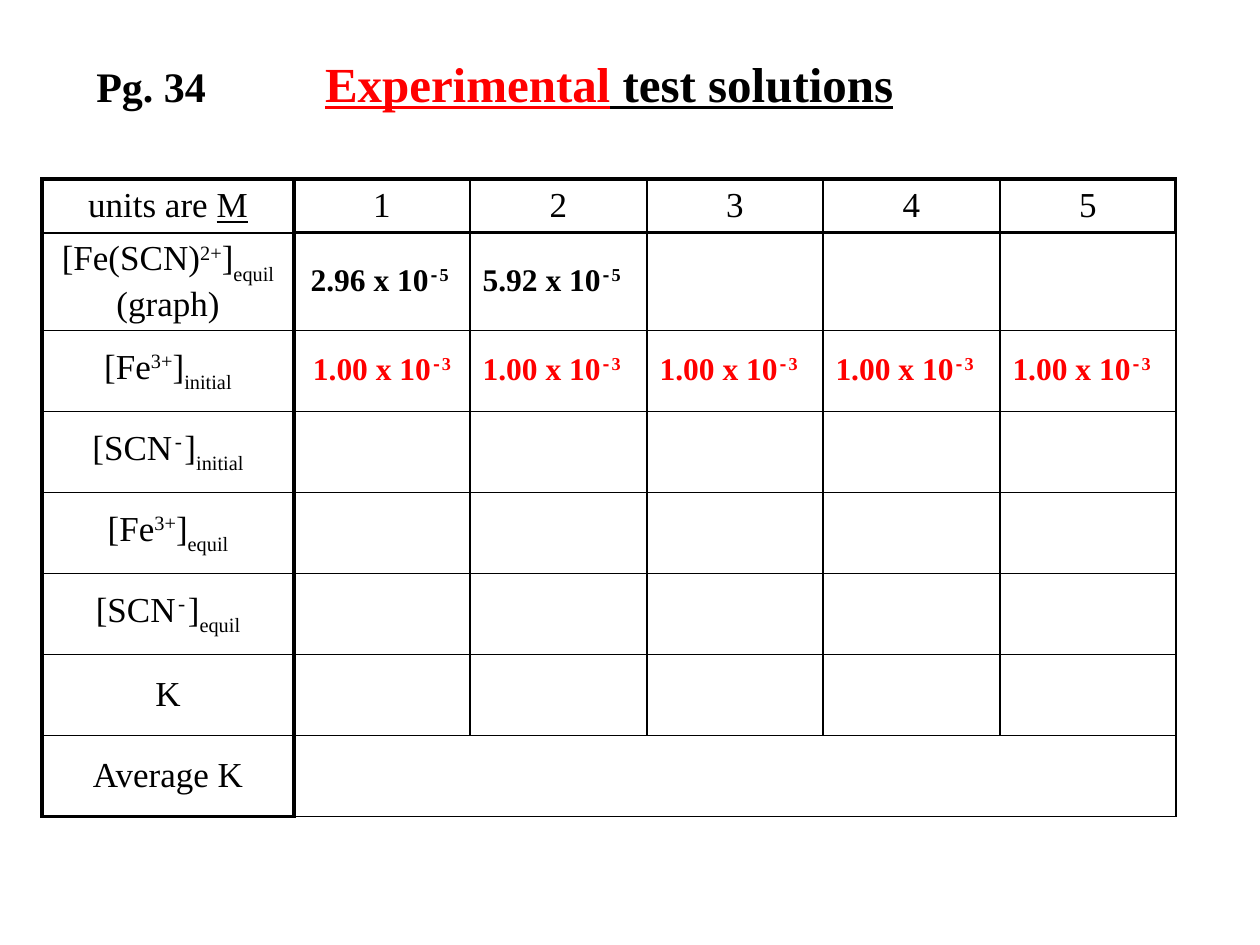
from lxml import etree
from pptx import Presentation, util as u
from pptx.dml.color import RGBColor
from pptx.enum import text as t
from pptx.oxml import ns

COLORS = {"ink": "000000", "red": "FF0000"}
SERIF, MONO = "Times New Roman", "Courier New"
SCALE = 914400 / 126

# Pieces are split by "|"; a leading ^ raises, _ lowers and * underlines a piece.
ROWS = [
    ["units are |*M", "1", "2", "3", "4", "5"],
    ["[Fe(SCN)|^2+|]|_equil| (graph)", "2.96 x 10|^-|^5 ", "5.92 x 10|^-|^5"],
    ["[Fe|^3+|]|_initial"] + ["1.00 x 10|^-|^3"] * 5,
    ["[SCN|^-|]|_initial"],
    ["[Fe|^3+|]|_equil"],
    ["[SCN|^-|]|_equil"],
    ["K"],
    ["Average K"],
]
WIDTHS = [252, 176, 177, 176, 177, 176]
HEIGHTS = [54, 97] + [81] * 6
TABLE = (42, 179)
BOXES = [
    ((325, 53, 662, 59), 0, 28,
     [("*Experimental", "red"), ("* test solutions", "ink")]),
    ((84, 54, 136, 63), None, 24, [("Pg. 34", "ink")]),
]


def px(*vals):
    return [u.Emu(round(v * SCALE)) for v in vals]


def write(para, markup, size, bold, color):
    for piece in markup.split("|"):
        mark = piece[0] if piece[0] in "^_*" else ""
        run = para.add_run()
        run.text = piece[len(mark):]
        look = {"name": MONO if piece == "^-" else SERIF, "size": u.Pt(size),
                "bold": bold, "underline": mark == "*"}
        for key, val in look.items():
            setattr(run.font, key, val)
        run.font.color.rgb = RGBColor.from_string(COLORS[color])
        if mark in ("^", "_"):
            shift = 30000 if mark == "^" else -30000
            run.font._element.set("baseline", str(shift))


def edge(cell, sides):
    """Draw the cell borders; sides maps L, R, T, B to points."""
    props = cell._tc.get_or_add_tcPr()
    for spot, (side, width) in enumerate(sides.items()):
        line = etree.Element(ns.qn(f"a:ln{side}"), w=str(u.Pt(width)))
        fill = etree.SubElement(line, ns.qn("a:solidFill"))
        etree.SubElement(fill, ns.qn("a:srgbClr"), val=COLORS["ink"])
        props.insert(spot, line)


def add_grid(slide):
    last = len(ROWS) - 1
    frame = slide.shapes.add_table(
        len(ROWS), len(WIDTHS), *px(*TABLE, sum(WIDTHS), sum(HEIGHTS)))
    grid = frame.table
    grid.first_row = grid.horz_banding = False
    for col, width in zip(grid.columns, px(*WIDTHS)):
        col.width = width
    for row, height in zip(grid.rows, px(*HEIGHTS)):
        row.height = height
    grid.cell(last, 1).merge(grid.cell(last, len(WIDTHS) - 1))

    for r, row in enumerate(ROWS):
        for c in range(len(WIDTHS)):
            cell = grid.cell(r, c)
            cell.fill.background()
            cell.vertical_anchor = t.MSO_ANCHOR.MIDDLE
            head = r == 0
            edge(cell, {
                "L": 2 if c < 2 else 1,
                "R": 2 if c == 0 or (head and c == 5) else 1,
                "T": 2 if head or (r == 1 and c) else 1,
                "B": 2 if (head and c) or (r == last and c == 0) else 1})
            if c < len(row):
                para = cell.text_frame.paragraphs[0]
                value = not head and c > 0
                left = value and c > 1
                para.alignment = t.PP_ALIGN.LEFT if left else t.PP_ALIGN.CENTER
                write(para, row[c], 18 if value else 20, value,
                      "red" if value and r == 2 else "ink")


def add_box(slide, place, inset, size, parts):
    frame = slide.shapes.add_textbox(*px(*place)).text_frame
    frame.word_wrap = True
    frame.auto_size = t.MSO_AUTO_SIZE.SHAPE_TO_FIT_TEXT
    if inset is not None:
        frame.vertical_anchor = t.MSO_ANCHOR.MIDDLE
        for side in ("left", "top", "right", "bottom"):
            setattr(frame, f"margin_{side}", inset)
    for markup, color in parts:
        write(frame.paragraphs[0], markup, size, True, color)


def main():
    deck = Presentation()
    deck.slide_width, deck.slide_height = px(1260, 945)
    slide = deck.slides.add_slide(deck.slide_layouts[6])
    add_grid(slide)
    for box in BOXES:
        add_box(slide, *box)
    deck.save("out.pptx")


if __name__ == "__main__":
    main()
